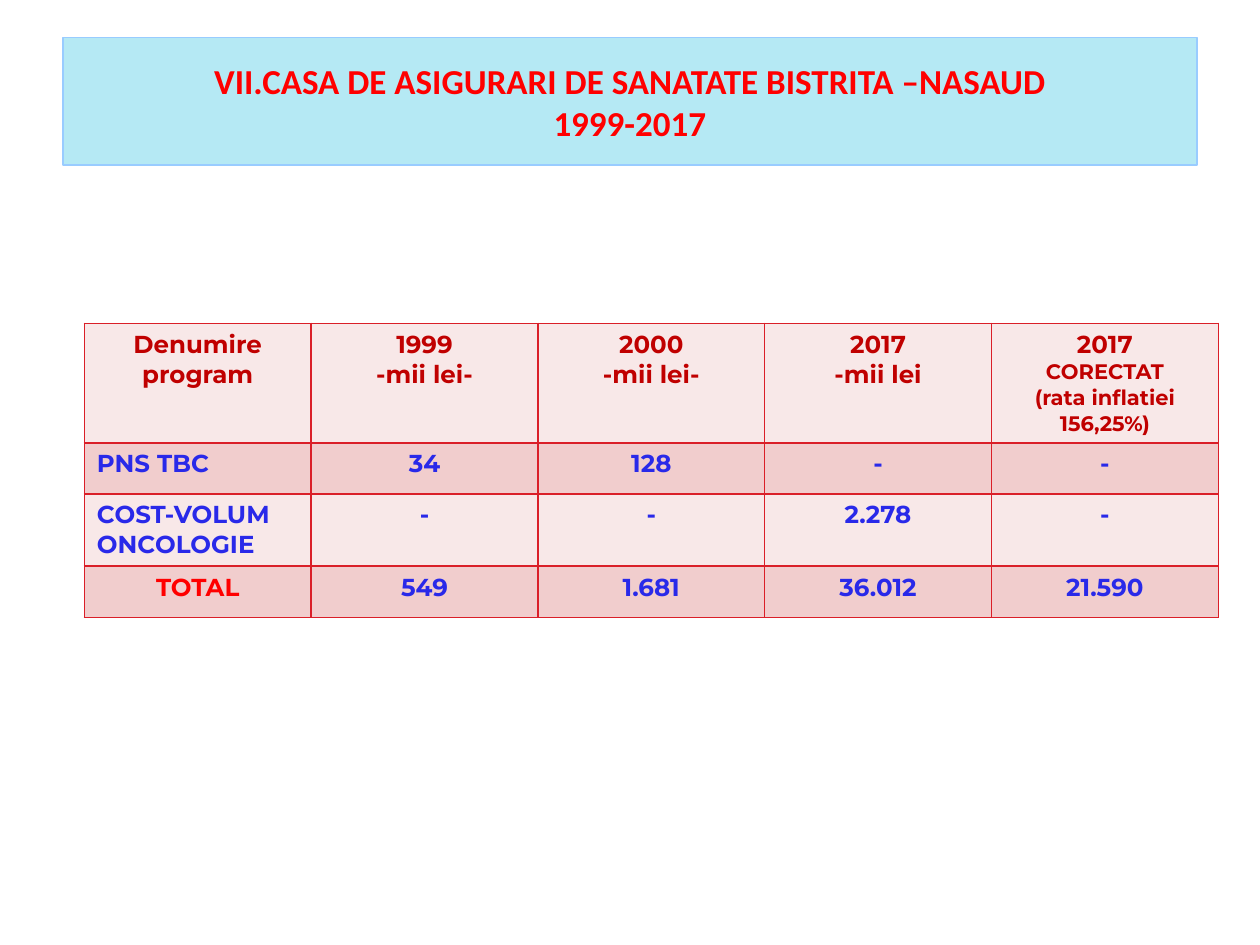
import pptx
import pptx.dml.color
import pptx.enum.text
import pptx.oxml
import pptx.oxml.ns
import pptx.util
from pptx.util import Cm

CENTER = pptx.enum.text.PP_ALIGN.CENTER
LEFT = pptx.enum.text.PP_ALIGN.LEFT

ROWS = [
    ["Denumire program", "1999\n-mii lei-", "2000\n-mii lei-", "2017\n-mii lei",
     "2017\nCORECTAT\n(rata inflatiei 156,25%)"],
    ["PNS TBC", "34", "128", "-", "-"],
    ["COST-VOLUM ONCOLOGIE", "-", "-", "2.278", "-"],
    ["TOTAL", "549", "1.681", "36.012", "21.590"],
]


def color(value):
    return pptx.dml.color.RGBColor.from_string(value)


class SlideBuilder:
    title_font = "Calibri"
    table_font = "Montserrat"
    red = "FF0000"
    header_color = "C00000"
    value_color = "2929E9"
    border_color = "DA1F28"
    bands = ("F8E8E8", "F1CDCD")

    def __init__(self, page):
        self.page = page

    def format_paragraph(self, para, font_name, size, hex_color, align=CENTER):
        para.alignment = align
        para.font.name = font_name
        para.font.size = pptx.util.Pt(size)
        para.font.bold = True
        para.font.color.rgb = color(hex_color)

    def title(self, text, left, top, width, height):
        box = self.page.shapes.title
        box.left, box.top, box.width, box.height = left, top, width, height
        box.fill.solid()
        box.fill.fore_color.rgb = color("B5E9F4")
        box.line.color.rgb = color("99CCFF")
        box.line.width = pptx.util.Pt(0.75)
        frame = box.text_frame
        frame.text = text
        frame.vertical_anchor = pptx.enum.text.MSO_ANCHOR.MIDDLE
        self.format_paragraph(frame.paragraphs[0], self.title_font, 20, self.red)

    def borders(self, cell):
        properties = cell._tc.get_or_add_tcPr()
        for side in ("lnL", "lnR", "lnT", "lnB"):
            properties.append(pptx.oxml.parse_xml(
                f'<a:{side} {pptx.oxml.ns.nsdecls("a")} w="12700"><a:solidFill>'
                f'<a:srgbClr val="{self.border_color}"/></a:solidFill></a:{side}>'))

    def cell(self, cell, text, row, column):
        self.borders(cell)
        cell.fill.solid()
        cell.fill.fore_color.rgb = color(self.bands[row % 2])
        cell.text = text
        is_total = text == "TOTAL"
        is_label = column == 0 and row > 0 and not is_total
        text_color = self.header_color if row == 0 else self.red if is_total else self.value_color
        for index, para in enumerate(cell.text_frame.paragraphs):
            size = 12 if row == 0 and column == 4 and index > 0 else 14
            self.format_paragraph(para, self.table_font, size, text_color,
                                  LEFT if is_label else CENTER)

    def table(self, rows, left, top, width, row_height):
        table = self.page.shapes.add_table(
            len(rows), len(rows[0]), left, top, width, row_height * len(rows)).table
        for row, texts in enumerate(rows):
            for column, text in enumerate(texts):
                self.cell(table.cell(row, column), text, row, column)


def main():
    deck = pptx.Presentation()
    deck.slide_width, deck.slide_height = Cm(25.4), Cm(19.05)
    builder = SlideBuilder(deck.slides.add_slide(deck.slide_layouts[5]))
    builder.title("VII.CASA DE ASIGURARI DE SANATATE BISTRITA –NASAUD\v1999-2017",
                  Cm(1.27), Cm(0.76), Cm(22.86), Cm(2.57))
    builder.table(ROWS, Cm(1.7), Cm(6.52), Cm(22.86), Cm(1.03))
    deck.save("out.pptx")


if __name__ == "__main__":
    main()
